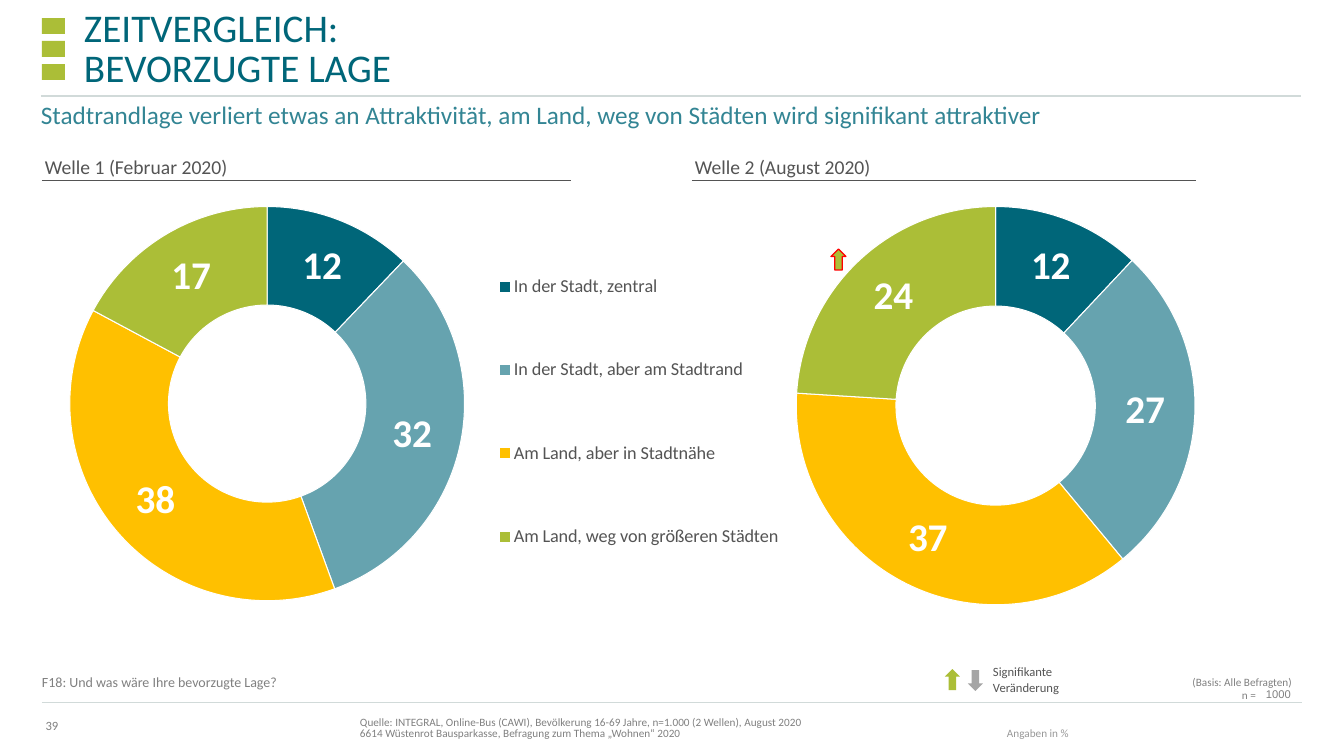
from lxml import etree
from pptx import Presentation
from pptx.chart.data import CategoryChartData
from pptx.dml.color import RGBColor
from pptx.enum.chart import XL_CHART_TYPE, XL_LEGEND_POSITION
from pptx.enum.shapes import MSO_CONNECTOR, MSO_SHAPE
from pptx.enum.text import MSO_ANCHOR, PP_ALIGN
from pptx.oxml.ns import qn
from pptx.util import Pt

PX = 914400 / 100.8

TEAL = RGBColor(0x00, 0x66, 0x79)
MID_TEAL = RGBColor(0x33, 0x85, 0x94)
LIGHT_TEAL = RGBColor(0x66, 0xA3, 0xAF)
YELLOW = RGBColor(0xFF, 0xC0, 0x00)
GREEN = RGBColor(0xAB, 0xBE, 0x37)
RED = RGBColor(0xFF, 0x00, 0x00)
WHITE = RGBColor(0xFF, 0xFF, 0xFF)
DARK_GREY = RGBColor(0x54, 0x54, 0x54)
GREY = RGBColor(0x80, 0x80, 0x80)
PALE_GREY = RGBColor(0x98, 0x98, 0x98)
ARROW_GREY = RGBColor(0xA5, 0xA5, 0xA5)
RULE_GREY = RGBColor(0xD1, 0xDA, 0xD9)

TOP, MIDDLE, BOTTOM = MSO_ANCHOR.TOP, MSO_ANCHOR.MIDDLE, MSO_ANCHOR.BOTTOM
LEFT, CENTER, RIGHT = PP_ALIGN.LEFT, PP_ALIGN.CENTER, PP_ALIGN.RIGHT
RECTANGLE = MSO_SHAPE.RECTANGLE
UP_ARROW, DOWN_ARROW = MSO_SHAPE.UP_ARROW, MSO_SHAPE.DOWN_ARROW
STRAIGHT = MSO_CONNECTOR.STRAIGHT
DOUGHNUT = XL_CHART_TYPE.DOUGHNUT
LEGEND_RIGHT = XL_LEGEND_POSITION.RIGHT

LOCATIONS = [
    "In der Stadt, zentral",
    "In der Stadt, aber am Stadtrand",
    "Am Land, aber in Stadtnähe",
    "Am Land, weg von größeren Städten",
]
LOCATION_COLORS = [TEAL, LIGHT_TEAL, YELLOW, GREEN]


def emu(*lengths):
    return [round(length * PX) for length in lengths]


def apply_format(target, values):
    for name, value in values.items():
        setattr(target, name, value)


def set_font(font, size, color, name="Calibri", bold=False):
    apply_format(font, {"name": name, "size": Pt(size), "bold": bold})
    font.color.rgb = color


def add_text(page, box, text, size, color, anchor=TOP, align=LEFT,
             spacing=None, margins=(0, 5, 0, 5)):
    """Margins are left, top, right, bottom in px."""
    frame = page.shapes.add_textbox(*emu(*box)).text_frame
    left, top, right, bottom = emu(*margins)
    apply_format(frame, {
        "word_wrap": True, "vertical_anchor": anchor,
        "margin_left": left, "margin_top": top,
        "margin_right": right, "margin_bottom": bottom,
    })
    para = frame.paragraphs[0]
    para.text = text
    apply_format(para, {"alignment": align, "line_spacing": spacing})
    for span in para.runs:
        set_font(span.font, size, color)


def add_rule(page, left, y, width, color):
    rule = page.shapes.add_connector(STRAIGHT, *emu(left, y, left + width, y))
    rule.line.color.rgb = color
    rule.line.width = Pt(0.75)
    etree.SubElement(rule._element.spPr, qn("a:effectLst"))


def add_filled(page, kind, box, color, outline=None):
    shape = page.shapes.add_shape(kind, *emu(*box))
    shape.shadow.inherit = False
    shape.fill.solid()
    shape.fill.fore_color.rgb = color
    if outline is None:
        shape.line.fill.background()
    else:
        shape.line.color.rgb = outline
        shape.line.width = Pt(0.85)


def set_layout(parent, index, fractions, inner=False):
    """Place a chart part by its x, y, w and h as fractions of the chart."""
    for old in parent.findall(qn("c:layout")):
        parent.remove(old)
    layout = etree.Element(qn("c:layout"))
    manual = etree.SubElement(layout, qn("c:manualLayout"))
    entries = [("layoutTarget", "inner")] if inner else []
    entries += [("xMode", "edge"), ("yMode", "edge")]
    entries += zip("xywh", fractions)
    for tag, value in entries:
        etree.SubElement(manual, qn(f"c:{tag}")).set("val", str(value))
    parent.insert(index, layout)


def add_doughnut(page, box, name, shares, plot_area, legend_area=None):
    data = CategoryChartData()
    data.categories = LOCATIONS
    data.add_series(name, shares)
    chart = page.shapes.add_chart(DOUGHNUT, *emu(*box), data).chart
    set_font(chart.font, 10, DARK_GREY)
    chart.has_title = False
    chart.has_legend = legend_area is not None
    if chart.has_legend:
        legend = chart.legend
        apply_format(legend, {"position": LEGEND_RIGHT, "include_in_layout": True})
        set_font(legend.font, 13, DARK_GREY)
        set_layout(legend._element, 1, legend_area)

    plot = chart.plots[0]
    plot.vary_by_categories = True
    plot._element.find(qn("c:holeSize")).set("val", "59")
    set_layout(plot._element.getparent(), 0, plot_area, inner=True)
    plot.has_data_labels = True
    labels = plot.data_labels
    apply_format(labels, {"show_value": True, "show_percentage": False})
    set_font(labels.font, 28, WHITE, bold=True)
    for index, color in enumerate(LOCATION_COLORS):
        style = plot.series[0].points[index].format
        style.fill.solid()
        style.fill.fore_color.rgb = color
        style.line.color.rgb = WHITE
        style.line.width = Pt(0.75)


def draw_header(page, left, top, width):
    for row in range(3):
        add_filled(page, RECTANGLE, (left, top + 18 + 23 * row, 23, 16), GREEN)
    add_text(page, (left + 32, top + 7, width - 32, 83), "ZEITVERGLEICH:\nBEVORZUGTE LAGE",
             28, TEAL, BOTTOM, spacing=Pt(28), margins=(10, 0, 10, 0))
    add_rule(page, left - 1, top + 96, width, RULE_GREY)
    add_text(page, (left - 1, top + 99, width, 32),
             "Stadtrandlage verliert etwas an Attraktivität, am Land, "
             "weg von Städten wird signifikant attraktiver",
             18, MID_TEAL, margins=(0, 0, 10, 5))


def draw_wave(page, left, top, width, title, shares, chart_box, **areas):
    """Chart box is given relative to the left and top of the wave."""
    add_text(page, (left + 3, top, width, 34), title, 14, DARK_GREY)
    add_rule(page, left, top + 31, width, DARK_GREY)
    dx, dy, chart_width, chart_height = chart_box
    add_doughnut(page, (left + dx, top + dy, chart_width, chart_height),
                 title, shares, **areas)


def draw_significance_key(page, left, top):
    add_filled(page, UP_ARROW, (left, top + 5, 15, 21), GREEN)
    add_filled(page, DOWN_ARROW, (left + 23, top + 6, 15, 21), ARROW_GREY)
    add_text(page, (left + 38, top, 101, 31), "Signifikante Veränderung",
             9, DARK_GREY, MIDDLE, margins=(10, 5, 10, 5))


def clear_borders(cell):
    properties = cell._tc.get_or_add_tcPr()
    for index, side in enumerate(("lnL", "lnR", "lnT", "lnB")):
        border = etree.Element(qn(f"a:{side}"), w="0")
        etree.SubElement(border, qn("a:noFill"))
        properties.insert(index, border)


def draw_sample_size(page, left, top):
    add_text(page, (left, top, 113, 24), "n =", 8, GREY, align=RIGHT)
    grid = page.shapes.add_table(1, 1, *emu(left + 31, top, 130, 20)).table
    apply_format(grid, {"first_row": False, "horz_banding": False})
    cell = grid.cell(0, 0)
    cell.fill.background()
    clear_borders(cell)
    side, edge = emu(13, 5)
    apply_format(cell, {"text": "1000", "margin_left": side, "margin_right": side,
                        "margin_top": edge, "margin_bottom": edge})
    para = cell.text_frame.paragraphs[0]
    para.alignment = RIGHT
    set_font(para.runs[0].font, 8, GREY, "Arial")


def draw_footer(page, left, top, width):
    add_text(page, (left, top, 847, 36), "F18: Und was wäre Ihre bevorzugte Lage?", 10, GREY, MIDDLE)
    add_text(page, (left + 848, top, 402, 36), "(Basis: Alle Befragten)", 8, GREY, MIDDLE, RIGHT)
    draw_sample_size(page, left + 1101, top + 19)
    draw_significance_key(page, left + 903, top)
    add_rule(page, left, top + 39, width, RULE_GREY)
    add_text(page, (left - 2, top + 54, 24, 15), "39", 9, GREY, MIDDLE, CENTER,
             margins=(0, 0, 0, 0))
    add_text(page, (left + 296, top + 47, 884, 34),
             "Quelle: INTEGRAL, Online-Bus (CAWI), Bevölkerung 16-69 Jahre, "
             "n=1.000 (2 Wellen), August 2020\n"
             "6614 Wüstenrot Bausparkasse, Befragung zum Thema „Wohnen“ 2020",
             8, GREY, BOTTOM, spacing=0.85, margins=(22, 5, 10, 5))
    add_text(page, (left + 943, top + 59, 102, 22), "Angaben in %", 8, PALE_GREY,
             BOTTOM, spacing=0.85, margins=(22, 5, 10, 5))


def main():
    deck = Presentation()
    deck.slide_width, deck.slide_height = emu(1344, 756)
    page = deck.slides.add_slide(deck.slide_layouts[6])
    draw_header(page, 42, 0, 1260)
    draw_wave(page, 42, 150, 529, "Welle 1 (Februar 2020)", (12, 32, 38, 17),
              (-34, 56, 864, 407), plot_area=(0.07, 0, 0.46, 0.97),
              legend_area=(0.56, 0.02, 0.34, 0.97))
    draw_wave(page, 692, 150, 504, "Welle 2 (August 2020)", (12, 27, 37, 24),
              (-13, 56, 609, 407), plot_area=(0.07, 0, 0.9, 0.98))
    add_filled(page, UP_ARROW, (831, 249, 15, 21), GREEN, RED)
    draw_footer(page, 42, 664, 1260)
    deck.save("out.pptx")


if __name__ == "__main__":
    main()
